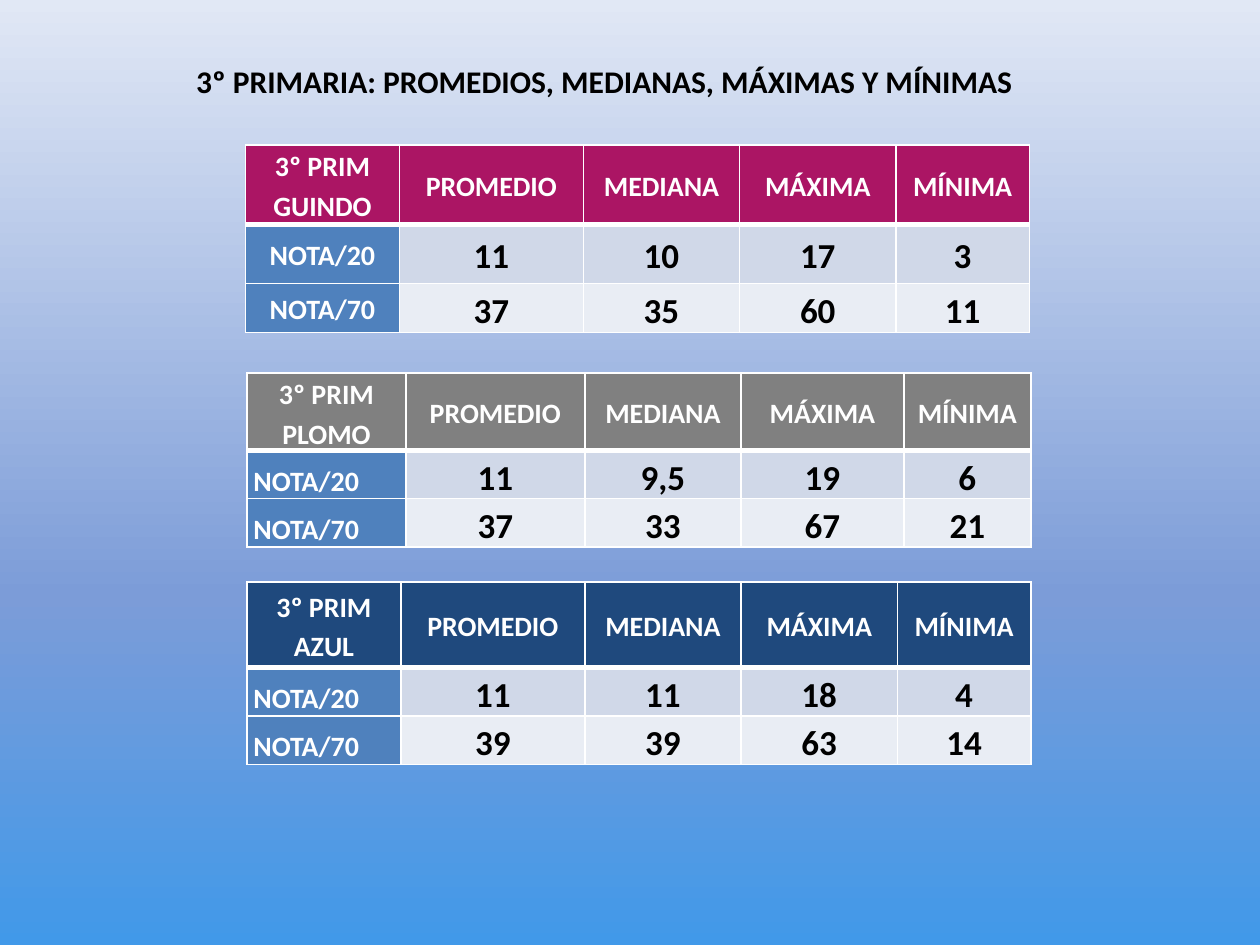
from copy import deepcopy

from lxml.etree import SubElement
from pptx import Presentation
from pptx.dml.color import RGBColor
from pptx.enum.text import MSO_ANCHOR, PP_ALIGN
from pptx.oxml.ns import qn
from pptx.util import Cm, Pt

COLORS = {
    "sky_bottom": "4199E9", "sky_middle": "7C9CD8", "sky_top": "E1E8F5",
    "guindo": "AB1564", "plomo": "808080", "azul": "1F497D",
    "label": "4F81BD", "band_dark": "D0D8E8", "band_light": "E9EDF4",
    "white": "FFFFFF", "black": "000000",
}
MEASURES = ["PROMEDIO", "MEDIANA", "MÁXIMA", "MÍNIMA"]
SCALES = ["NOTA/20", "NOTA/70"]
WIDE = [3.1, 3.71, 3.15, 3.15, 2.69]

# Boxes are left, top, width, height in cm
TITLE_BOX = (3.55, 1.12, 17.27, 1.02)
GRADES = [
    dict(name="guindo", box=(4.95, 2.92, 15.8, 3.81), cols=WIDE, rows=[1.6, 1.19, 0.99],
         anchor=MSO_ANCHOR.MIDDLE, label_align=PP_ALIGN.CENTER,
         scores=[["11", "10", "17", "3"], ["37", "35", "60", "11"]]),
    dict(name="plomo", box=(4.98, 7.52, 15.8, 3.51), cols=[3.2, 3.61, 3.15, 3.28, 2.56],
         rows=[1.55, 0.81, 0.81], anchor=MSO_ANCHOR.BOTTOM, label_align=PP_ALIGN.LEFT,
         scores=[["11", "9,5", "19", "6"], ["37", "33", "67", "21"]]),
    dict(name="azul", box=(4.98, 11.73, 15.8, 3.68), cols=WIDE, rows=[1.73, 0.94, 0.94],
         anchor=MSO_ANCHOR.BOTTOM, label_align=PP_ALIGN.LEFT,
         scores=[["11", "11", "18", "4"], ["39", "39", "63", "14"]]),
]


def rgb(name):
    return RGBColor.from_string(COLORS[name])


def set_attrs(obj, values):
    for key, value in values.items():
        setattr(obj, key, value)


def write(tf, text, size, color, align, spacing=1.0):
    p = tf.paragraphs[0]
    set_attrs(p, dict(alignment=align, line_spacing=spacing))
    r = p.add_run()
    r.text = text
    set_attrs(r.font, dict(name="Calibri", size=Pt(size), bold=True))
    r.font.color.rgb = rgb(color)


def paint_background(s):
    fill = s.background.fill
    fill.gradient()
    fill.gradient_angle = 90
    # The default gradient has two stops; the middle one is added
    stops = s.element.find(".//" + qn("a:gsLst"))
    stops.insert(1, deepcopy(stops[0]))
    sky = [(0, "sky_bottom"), (0.37, "sky_middle"), (1, "sky_top")]
    for stop, (position, color) in zip(fill.gradient_stops, sky):
        stop.position = position
        stop.color.rgb = rgb(color)


def add_title(s, box, text):
    tf = s.shapes.add_textbox(*map(Cm, box)).text_frame
    tf.word_wrap = False
    write(tf, text, 18, "black", PP_ALIGN.CENTER)


def set_borders(cell, widths):
    tcPr = cell._tc.get_or_add_tcPr()
    for side, width in widths.items():
        ln = SubElement(tcPr, qn("a:ln" + side), w=str(Pt(width)))
        SubElement(SubElement(ln, qn("a:solidFill")), qn("a:srgbClr"), val=COLORS["white"])


def add_grade_table(s, box, name, cols, rows, anchor, label_align, scores):
    grid = [[f"3º PRIM {name.upper()}"] + MEASURES]
    grid += [[scale] + row for scale, row in zip(SCALES, scores)]
    table = s.shapes.add_table(len(rows), len(cols), *map(Cm, box)).table
    table.horz_banding = False
    for column, width in zip(table.columns, cols):
        column.width = Cm(width)
    for row, height in zip(table.rows, rows):
        row.height = Cm(height)

    for i, texts in enumerate(grid):
        for j, text in enumerate(texts):
            cell = table.cell(i, j)
            # Kind of cell: header, row label or score
            if i == 0:
                fill, size, color, align = name, 16, "white", PP_ALIGN.CENTER
            elif j == 0:
                fill, size, color, align = "label", 16, "white", label_align
            else:
                fill = "band_dark" if i == 1 else "band_light"
                size, color, align = 20, "black", PP_ALIGN.CENTER
            set_attrs(cell, dict(
                vertical_anchor=MSO_ANCHOR.MIDDLE if i == 0 else anchor,
                margin_left=Cm(0.13), margin_right=Cm(0.13), margin_top=0, margin_bottom=0))
            # Thick rule between header and scores
            set_borders(cell, {"L": 1, "R": 1, "T": 3 if i == 1 else 1, "B": 3 if i == 0 else 1})
            cell.fill.solid()
            cell.fill.fore_color.rgb = rgb(fill)
            write(cell.text_frame, text, size, color, align, 1.15)


def main():
    prs = Presentation()
    set_attrs(prs, dict(slide_width=Cm(25.4), slide_height=Cm(19.05)))
    s = prs.slides.add_slide(prs.slide_layouts[6])
    paint_background(s)
    add_title(s, TITLE_BOX, "3º PRIMARIA: PROMEDIOS, MEDIANAS, MÁXIMAS Y MÍNIMAS")
    for grade in GRADES:
        add_grade_table(s, **grade)
    prs.save("out.pptx")


if __name__ == "__main__":
    main()
